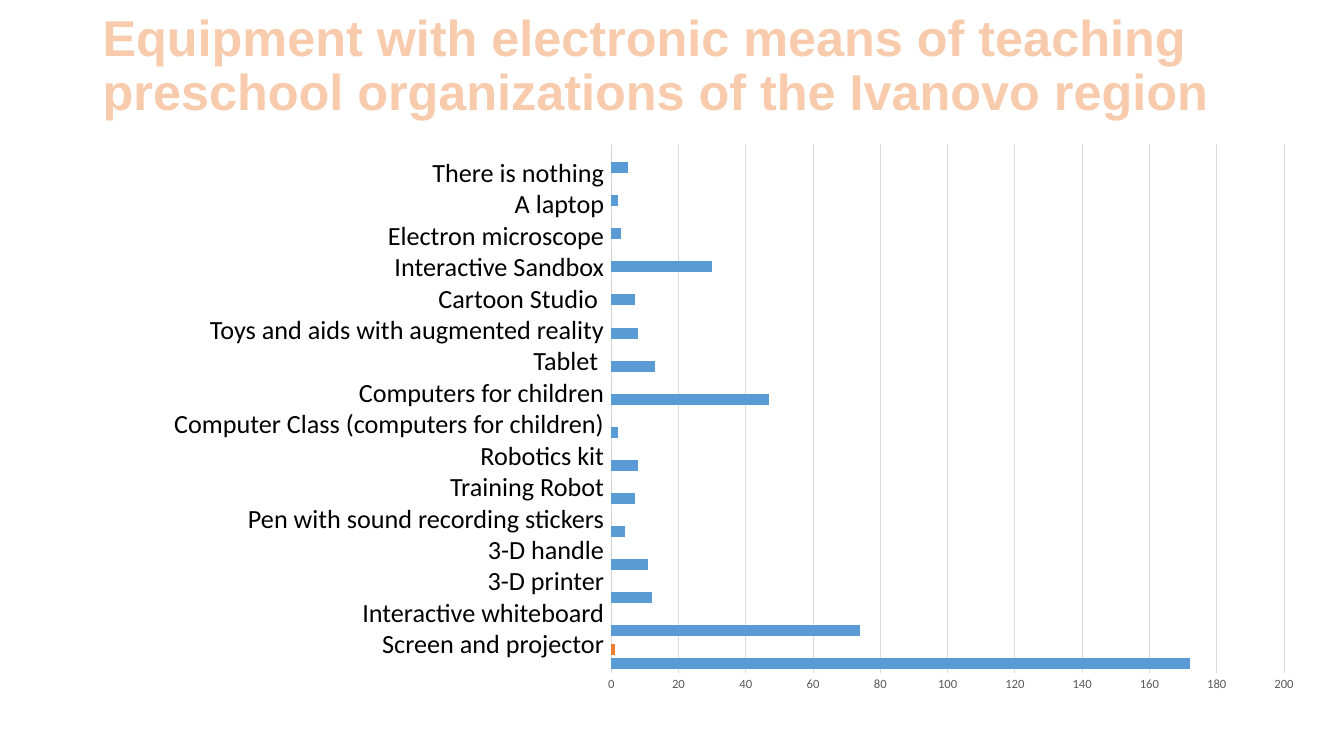
from dataclasses import dataclass

from lxml import etree
from pptx import Presentation
from pptx import util as u
from pptx.chart import data as chart_data
from pptx.dml.color import RGBColor
from pptx.enum import chart as charts, text
from pptx.oxml import parse_xml
from pptx.oxml import ns


@dataclass(frozen=True)
class Equipment:
    label: str
    first_value: int
    second_value: int = 0


EQUIPMENT = [
    Equipment("Screen and projector", 172, 1),
    Equipment("Interactive whiteboard", 74),
    Equipment("3-D printer", 12),
    Equipment("3-D handle", 11),
    Equipment("Pen with sound recording stickers", 4),
    Equipment("Training Robot", 7),
    Equipment("Robotics kit", 8),
    Equipment("Computer Class (computers for children)", 2),
    Equipment("Computers for children", 47),
    Equipment("Tablet ", 13),
    Equipment("Toys and aids with augmented reality", 8),
    Equipment("Cartoon Studio ", 7),
    Equipment("Interactive Sandbox", 30),
    Equipment("Electron microscope", 3),
    Equipment("A laptop", 2),
    Equipment("There is nothing", 5),
]
SERIES_COLORS = ["5B9BD5", "ED7D31"]
PLOT_LAYOUT = {"x": 0.02, "y": 0.02, "w": 0.94, "h": 0.93}


def color(value: str) -> RGBColor:
    return RGBColor.from_string(value)


def set_font(font, size: float, fill: str, name: str = "Calibri", bold: bool = False) -> None:
    font.size = u.Pt(size)
    font.name = name
    font.bold = bold
    font.color.rgb = color(fill)


def add_text(slide, lines: list[str], left: float, top: float, width: float, height: float,
             *, size: float, fill: str, name: str = "Calibri", bold: bool = False,
             align=text.PP_ALIGN.LEFT, anchor=text.MSO_ANCHOR.TOP,
             spacing: float = 1.0, outline: str = "") -> None:
    shape = slide.shapes.add_textbox(
        u.Inches(left), u.Inches(top), u.Inches(width), u.Inches(height))
    frame = shape.text_frame
    frame.word_wrap = True
    frame.vertical_anchor = anchor
    frame.text = "\n".join(lines)
    for paragraph in frame.paragraphs:
        paragraph.alignment = align
        paragraph.line_spacing = spacing
        for run in paragraph.runs:
            set_font(run.font, size, fill, name, bold)
            if outline:
                run.font._element.insert(0, parse_xml(
                    f'<a:ln {ns.nsdecls("a")} w="{u.Pt(1.75)}"><a:solidFill>'
                    f'<a:srgbClr val="{outline}"/></a:solidFill></a:ln>'))


def set_plot_layout(chart) -> None:
    plot_area = chart._chartSpace.chart.plotArea
    for old_layout in plot_area.findall(ns.qn("c:layout")):
        plot_area.remove(old_layout)
    layout = etree.Element(ns.qn("c:layout"))
    manual = etree.SubElement(layout, ns.qn("c:manualLayout"))
    settings = {"layoutTarget": "inner", "xMode": "edge", "yMode": "edge", **PLOT_LAYOUT}
    for tag, value in settings.items():
        etree.SubElement(manual, ns.qn(f"c:{tag}")).set("val", str(value))
    plot_area.insert(0, layout)


def add_equipment_chart(slide) -> None:
    data = chart_data.CategoryChartData()
    data.categories = [str(number) for number in range(1, len(EQUIPMENT) + 1)]
    data.add_series("Series 1", [item.first_value for item in EQUIPMENT])
    data.add_series("Series 2", [item.second_value for item in EQUIPMENT])
    chart = slide.shapes.add_chart(
        charts.XL_CHART_TYPE.BAR_CLUSTERED,
        u.Inches(5.92), u.Inches(1.32), u.Inches(7.1), u.Inches(5.64), data).chart
    set_font(chart.font, 10, "000000")
    chart.has_legend = False
    chart.has_title = False
    set_plot_layout(chart)

    plot = chart.plots[0]
    plot.gap_width = 75
    plot.overlap = -25
    plot.vary_by_categories = False
    for series, fill in zip(plot.series, SERIES_COLORS):
        series.format.fill.solid()
        series.format.fill.fore_color.rgb = color(fill)
        series.invert_if_negative = False

    chart.category_axis.visible = False
    axis = chart.value_axis
    axis.minimum_scale, axis.maximum_scale, axis.major_unit = 0, 200, 20
    axis.major_tick_mark = charts.XL_TICK_MARK.NONE
    axis.minor_tick_mark = charts.XL_TICK_MARK.NONE
    axis.format.line.fill.background()
    axis.has_major_gridlines = True
    gridline = axis.major_gridlines.format.line
    gridline.color.rgb = color("D9D9D9")
    gridline.width = u.Pt(0.75)
    set_font(axis.tick_labels.font, 9, "595959")


def main() -> None:
    presentation = Presentation()
    presentation.slide_width = u.Inches(13.33)
    presentation.slide_height = u.Inches(7.5)
    slide = presentation.slides.add_slide(presentation.slide_layouts[6])
    add_text(
        slide,
        ["Equipment with electronic means of teaching preschool organizations of the Ivanovo region"],
        0.92, 0.05, 11.5, 1.23, size=36, fill="F8CBAD", name="Arial", bold=True,
        anchor=text.MSO_ANCHOR.MIDDLE, spacing=0.9, outline="ED7D31")
    add_equipment_chart(slide)
    add_text(
        slide, [item.label for item in reversed(EQUIPMENT)],
        1.42, 1.5, 4.67, 5.22, size=18.7, fill="000000", align=text.PP_ALIGN.RIGHT)
    presentation.save("out.pptx")


if __name__ == "__main__":
    main()
